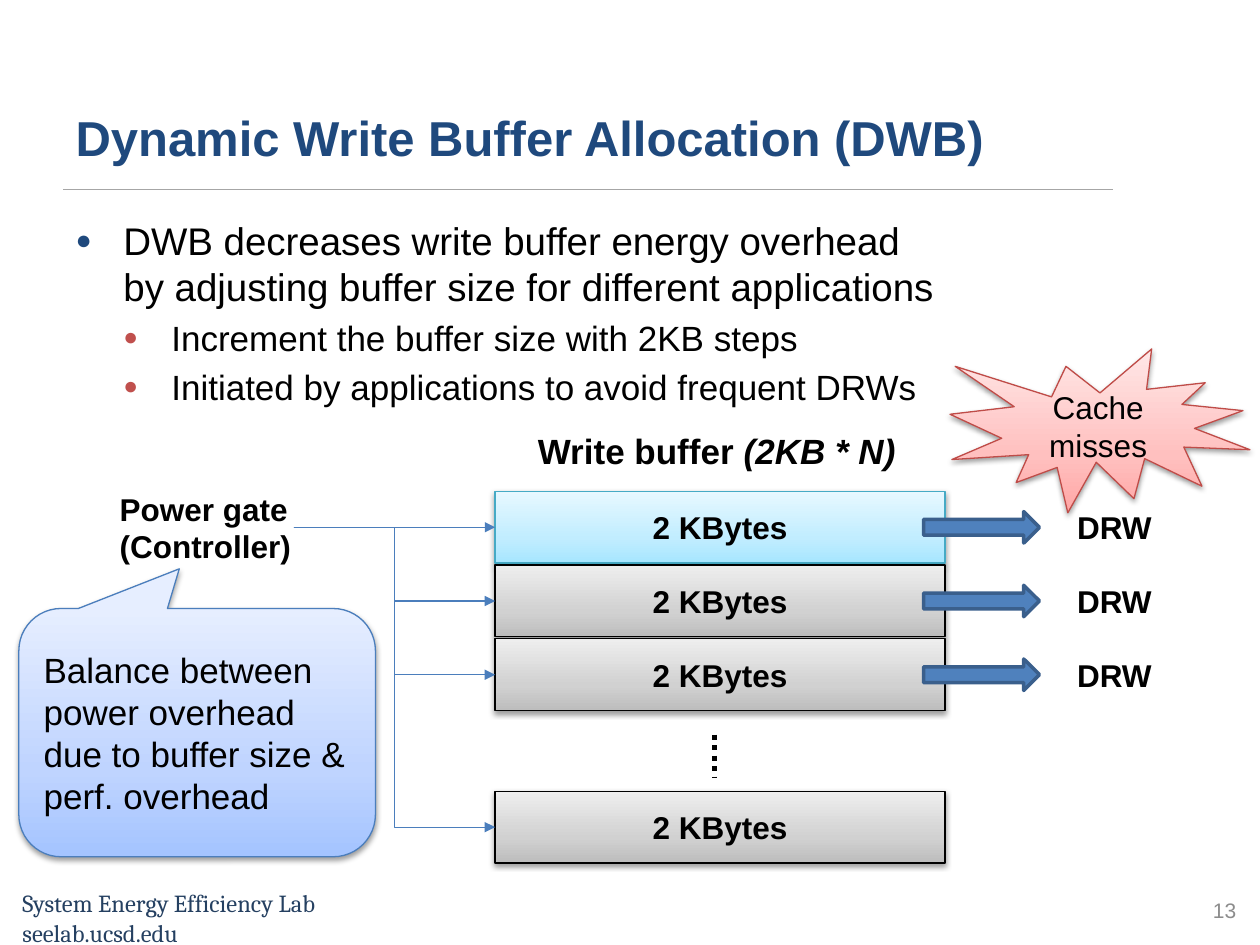
import pptx
import pptx.util
import pptx.dml.color
import pptx.enum.dml
import pptx.enum.shapes
import pptx.enum.text
import pptx.oxml
import pptx.oxml.ns

In, Pt = pptx.util.Inches, pptx.util.Pt
RGB = pptx.dml.color.RGBColor.from_string
SHAPE = pptx.enum.shapes.MSO_SHAPE
LINK = pptx.enum.shapes.MSO_CONNECTOR
ALIGN = pptx.enum.text.PP_ALIGN
ANCHOR = pptx.enum.text.MSO_ANCHOR
NS = pptx.oxml.ns.nsdecls("a")

THEME = dict(
    font="Arial", footer_font="Cambria",
    title=28, body=22, sub=20, label=18, footer=14, number=12,
    ink="000000", navy="1F497D", red="C0504D", footer_ink="254061", grey="8C8C8C",
    rule="A6A6A6", link="4B7EBC", arrow="4F81BD", arrow_edge="3A5F8C",
    # gradient stops from bottom to top, then the outline
    cyan=(("A7E6FF", "C1EDFF", "E7F8FF"), "46AAC5"),
    silver=(("BDBDBD", "D1D1D1", "EEEEEE"), "000000"),
    rose=(("FFA6A5", "FFC0BF", "FFE7E7"), "BF4C48"),
    blue=(("A4C4FF", "BFD4FF", "E6EEFF"), "4B7EBC"),
)

TITLE = "Dynamic Write Buffer Allocation (DWB)"
BULLETS = [
    (0, "DWB decreases write buffer energy overhead\n"
        "by adjusting buffer size for different applications"),
    (1, "Increment the buffer size with 2KB steps"),
    (1, "Initiated by applications to avoid frequent DRWs"),
]
LEVELS = [("body", "navy"), ("sub", "red")]
FOOTER = ["System Energy Efficiency Lab", "seelab.ucsd.edu"]
NUMBER = "13"
HEADING = [("Write buffer ", False), ("(2KB * N)", True)]
GATE = ["Power gate", "(Controller)"]
BLOCK, WRITE = "2 KBytes", "DRW"
MISSES = "Cache misses"
BALANCE = "Balance between\npower overhead due to buffer size &\nperf. overhead"

# Buffer column: three stacked blocks, then the last one after a gap
BLOCK_X, BLOCK_W, BLOCK_H = 3.93, 3.57, 0.57
FIRST_Y, PITCH, LAST_Y = 3.9, 0.585, 6.28
BLOCKS = [(FIRST_Y + i * PITCH, "silver" if i else "cyan", True) for i in range(3)]
BLOCKS.append((LAST_Y, "silver", False))
GATE_X, GATE_W, GATE_H = 0.9, 1.43, 0.81
ARROW_X, ARROW_W, ARROW_H = 7.33, 0.92, 0.25


def write(p, text, size, color="ink", bold=False, italic=False, font="font", align=None):
    """Append text to a paragraph; each newline becomes a line break."""
    for i, line in enumerate(text.split("\n")):
        if i:
            p.add_line_break()
        r = p.add_run()
        r.text = line
        r.font.name, r.font.size = THEME[font], Pt(THEME[size])
        r.font.bold, r.font.italic = bold, italic
        r.font.color.rgb = RGB(THEME[color])
    if align is not None:
        p.alignment = align


def add_text(s, box, lines, wrap=True, anchor=ANCHOR.TOP, **fmt):
    sp = s.shapes.add_textbox(*map(In, box))
    tf = sp.text_frame
    tf.word_wrap, tf.vertical_anchor = wrap, anchor
    for i, line in enumerate(lines):
        write(tf.add_paragraph() if i else tf.paragraphs[0], line, **fmt)
    return sp


def add_glossy(s, kind, box, look, text, align=ALIGN.CENTER, **fmt):
    """Add a shape with a three-stop gradient, a thin outline and a soft shadow."""
    stops, edge = THEME[look]
    sp = s.shapes.add_shape(kind, *map(In, box))
    sp.line.color.rgb, sp.line.width = RGB(edge), Pt(0.75)
    sp.shadow.inherit = False
    gs = "".join(f'<a:gs pos="{pos}"><a:srgbClr val="{c}"/></a:gs>'
                 for pos, c in zip((0, 35000, 100000), stops))
    sp.fill.gradient()
    grad = sp._element.spPr.find(pptx.oxml.ns.qn("a:gradFill"))
    grad.getparent().replace(grad, pptx.oxml.parse_xml(
        f'<a:gradFill {NS} rotWithShape="1"><a:gsLst>{gs}</a:gsLst>'
        '<a:lin ang="16200000" scaled="0"/></a:gradFill>'))
    sp._element.spPr.find(pptx.oxml.ns.qn("a:effectLst")).append(pptx.oxml.parse_xml(
        f'<a:outerShdw {NS} blurRad="40000" dist="20000" dir="5400000" rotWithShape="0">'
        '<a:srgbClr val="000000"><a:alpha val="38000"/></a:srgbClr></a:outerShdw>'))
    sp.text_frame.word_wrap = True
    sp.text_frame.vertical_anchor = ANCHOR.MIDDLE
    write(sp.text_frame.paragraphs[0], text, align=align, **fmt)
    return sp


def add_line(s, kind, start, end, color, width):
    c = s.shapes.add_connector(kind, *map(In, start + end))
    c.line.color.rgb, c.line.width = RGB(THEME[color]), Pt(width)
    c._element.spPr.append(pptx.oxml.parse_xml(f"<a:effectLst {NS}/>"))
    return c


def place(ph, box):
    ph.left, ph.top, ph.width, ph.height = map(In, box)
    ph.text_frame.auto_size = pptx.enum.text.MSO_AUTO_SIZE.NONE
    return ph.text_frame


def fill_body(tf):
    tf.vertical_anchor = ANCHOR.TOP
    for i, (level, text) in enumerate(BULLETS):
        p = tf.add_paragraph() if i else tf.paragraphs[0]
        size, color = LEVELS[level]
        p.level = level
        pPr = p._p.get_or_add_pPr()
        pPr.set("marL", str(In(0.38 * (level + 1))))
        pPr.set("indent", str(In(-0.38)))
        for xml in (f'<a:buClr {NS}><a:srgbClr val="{THEME[color]}"/></a:buClr>',
                    f'<a:buSzPct {NS} val="70000"/>',
                    f'<a:buFont {NS} typeface="{THEME["font"]}"/>',
                    f'<a:buChar {NS} char="●"/>'):
            pPr.append(pptx.oxml.parse_xml(xml))
        if i == 0:
            p.space_before = Pt(0)
        write(p, text, size)


def add_buffer(s):
    """Draw the power gate, the blocks it feeds and the writes that leave them."""
    feed_y = FIRST_Y + BLOCK_H / 2
    gate = add_text(s, (GATE_X, feed_y - GATE_H / 2, GATE_W, GATE_H), GATE,
                    anchor=ANCHOR.MIDDLE, size="label", bold=True)
    gate.text_frame.margin_left = In(0.05)
    gate.text_frame.margin_right = 0
    for y, look, drains in BLOCKS:
        mid = y + BLOCK_H / 2
        block = add_glossy(s, SHAPE.RECTANGLE, (BLOCK_X, y, BLOCK_W, BLOCK_H), look,
                           BLOCK, size="label", bold=True)
        kind = LINK.STRAIGHT if y == FIRST_Y else LINK.ELBOW
        feed = add_line(s, kind, (GATE_X + GATE_W, feed_y), (BLOCK_X, mid), "link", 0.75)
        feed.begin_connect(gate, 3)
        feed.end_connect(block, 1)
        feed.line._get_or_add_ln().append(
            pptx.oxml.parse_xml(f'<a:tailEnd {NS} type="triangle"/>'))
        if drains:
            arrow = s.shapes.add_shape(SHAPE.RIGHT_ARROW, *map(
                In, (ARROW_X, mid - ARROW_H / 2, ARROW_W, ARROW_H)))
            arrow.shadow.inherit = False
            arrow.fill.solid()
            arrow.fill.fore_color.rgb = RGB(THEME["arrow"])
            arrow.line.color.rgb, arrow.line.width = RGB(THEME["arrow_edge"]), Pt(2)
            add_text(s, (8.45, mid - 0.2, 0.8, 0.4), [WRITE], wrap=False,
                     size="label", bold=True)
    dots = add_line(s, LINK.STRAIGHT, (5.67, 5.83), (5.67, 6.17), "ink", 3)
    dots.line.dash_style = pptx.enum.dml.MSO_LINE.ROUND_DOT


def main():
    prs = pptx.Presentation()
    prs.slide_width, prs.slide_height = In(10), In(7.5)
    s = prs.slides.add_slide(prs.slide_layouts[1])

    tf = place(s.shapes.title, (0.5, 0.42, 8.25, 0.95))
    tf.vertical_anchor = ANCHOR.BOTTOM
    write(tf.paragraphs[0], TITLE, "title", color="navy", bold=True, align=ALIGN.LEFT)
    fill_body(place(s.placeholders[1], (0.5, 1.67, 9, 5.17)))

    add_line(s, LINK.STRAIGHT, (0.5, 1.5), (8.83, 1.5), "rule", 0.5)
    add_text(s, (0.08, 7, 3.17, 0.57), FOOTER, size="footer",
             color="footer_ink", font="footer_font")
    add_text(s, (7.58, 7.02, 2.33, 0.4), [NUMBER], anchor=ANCHOR.MIDDLE,
             size="number", color="grey", align=ALIGN.RIGHT)

    heading = add_text(s, (4.17, 3.36, 3.3, 0.54), [])
    for text, italic in HEADING:
        write(heading.text_frame.paragraphs[0], text, "sub", bold=True, italic=italic)
    add_buffer(s)
    add_glossy(s, SHAPE.EXPLOSION1, (7.54, 2.77, 2.38, 1.3), "rose", MISSES, size="label")
    callout = add_glossy(s, SHAPE.ROUNDED_RECTANGULAR_CALLOUT, (0.15, 4.83, 2.83, 1.97),
                         "blue", BALANCE, align=ALIGN.LEFT, size="sub")
    for i, value in enumerate((-0.05, -0.66, 0.17)):
        callout.adjustments[i] = value
    prs.save("out.pptx")


if __name__ == "__main__":
    main()
